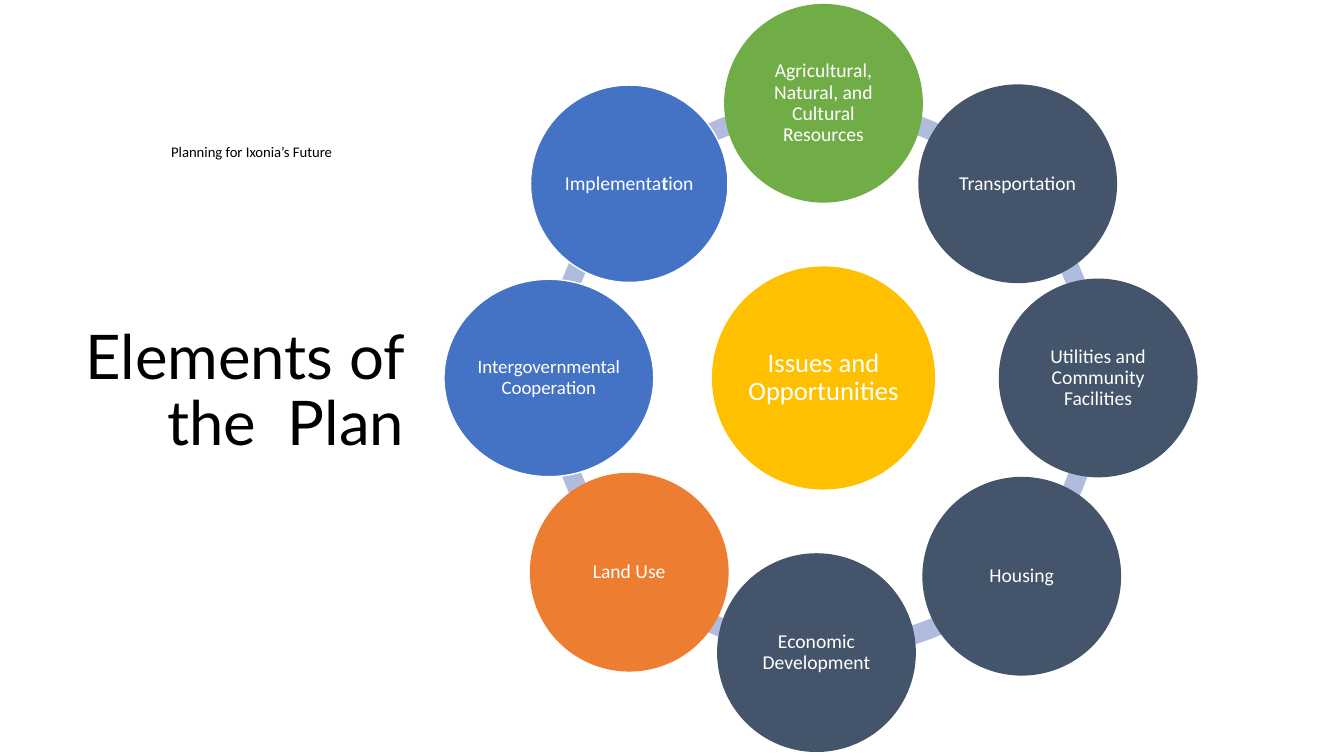
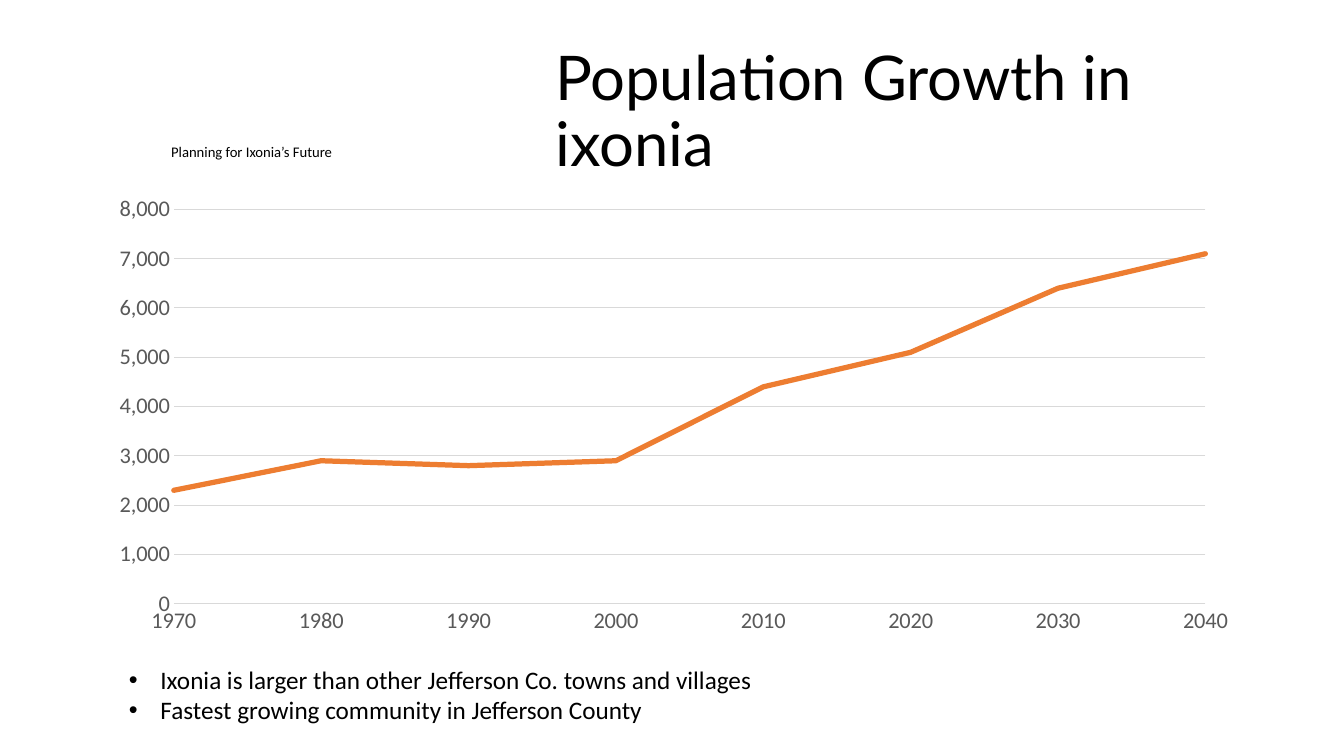
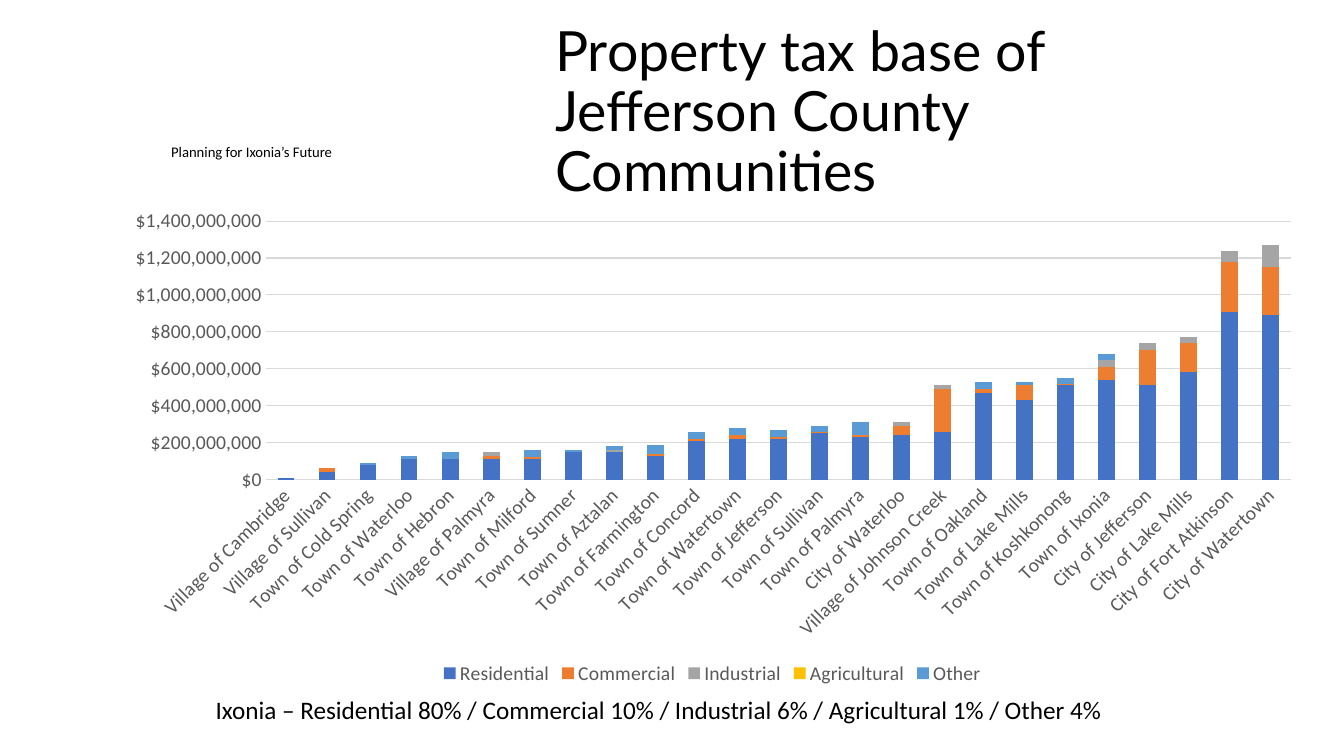
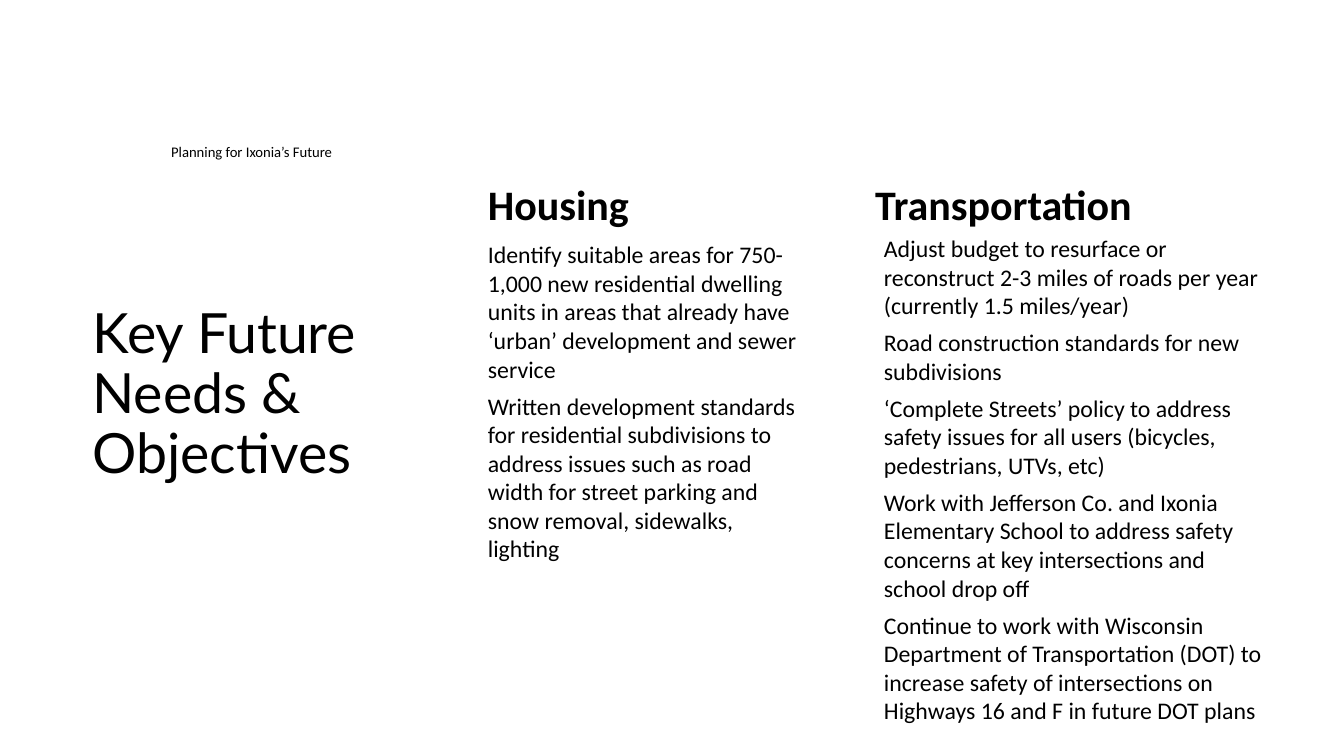
from dataclasses import dataclass
from math import cos, radians, sin
from typing import NamedTuple

from pptx import Presentation
from pptx.chart.chart import Chart
from pptx.chart.data import CategoryChartData
from pptx.dml.color import RGBColor
from pptx.enum.chart import XL_CHART_TYPE, XL_LEGEND_POSITION, XL_TICK_MARK
from pptx.enum.shapes import MSO_SHAPE
from pptx.enum.text import MSO_ANCHOR, PP_ALIGN
from pptx.oxml.ns import qn
from pptx.oxml.xmlchemy import OxmlElement
from pptx.presentation import Presentation as Deck
from pptx.slide import Slide
from pptx.text.text import TextFrame
from pptx.util import Pt

BLACK = RGBColor(0x00, 0x00, 0x00)
WHITE = RGBColor(0xFF, 0xFF, 0xFF)
BLUE = RGBColor(0x44, 0x72, 0xC4)
ORANGE = RGBColor(0xED, 0x7D, 0x31)
GRAY = RGBColor(0xA5, 0xA5, 0xA5)
GOLD = RGBColor(0xFF, 0xC0, 0x00)
SKY = RGBColor(0x5B, 0x9B, 0xD5)
GREEN = RGBColor(0x70, 0xAD, 0x47)
SLATE = RGBColor(0x44, 0x54, 0x6A)
PALE_BLUE = RGBColor(0xB0, 0xBC, 0xDE)
GRID_GRAY = RGBColor(0xD9, 0xD9, 0xD9)
LABEL_GRAY = RGBColor(0x59, 0x59, 0x59)

BODY_FONT = "Calibri"
TITLE_FONT = "Lato"

LINE = XL_CHART_TYPE.LINE
STACKED = XL_CHART_TYPE.COLUMN_STACKED
BOTTOM = XL_LEGEND_POSITION.BOTTOM
NO_TICK = XL_TICK_MARK.NONE
OVAL = MSO_SHAPE.OVAL
BLOCK_ARC = MSO_SHAPE.BLOCK_ARC
LEFT, CENTER, RIGHT = PP_ALIGN.LEFT, PP_ALIGN.CENTER, PP_ALIGN.RIGHT
TOP, MIDDLE = MSO_ANCHOR.TOP, MSO_ANCHOR.MIDDLE

BLANK_LAYOUT = 6


class Box(NamedTuple):
    """A rectangle in points."""
    left: float
    top: float
    width: float
    height: float

    def emu(self) -> list[int]:
        return [Pt(length) for length in self]


class PlotArea(NamedTuple):
    """Inner plot area as fractions of the chart."""
    x: float
    y: float
    w: float
    h: float


class Run(NamedTuple):
    text: str
    bold: bool = False


@dataclass(frozen=True)
class TextStyle:
    size: float
    font: str = BODY_FONT
    color: RGBColor = BLACK
    align: PP_ALIGN = LEFT
    anchor: MSO_ANCHOR = TOP
    line_spacing: float | None = None
    space_after: float = 0
    inset: float | None = None
    bulleted: bool = False


@dataclass(frozen=True)
class Element:
    """A plan element; the ring holds them clockwise from the top."""
    runs: tuple[Run, ...]
    fill: RGBColor
    outline: RGBColor
    width: float = 141
    text_size: float = 14
    dx: float = 0
    dy: float = 0


@dataclass(frozen=True)
class Arc:
    """A ring segment, in degrees clockwise from the right."""
    start: float
    end: float
    dx: float = 0
    dy: float = 0


@dataclass(frozen=True)
class Column:
    heading: str
    heading_box: Box
    needs: tuple[str, ...]
    needs_box: Box


class Series(NamedTuple):
    name: str
    values: list[int]
    color: RGBColor


TITLE_BOX = Box(389.5, 28.8, 504.7, 104.4)
HEADING = TextStyle(30, inset=0)
NEEDS = TextStyle(17, inset=0, space_after=6)
NOTE = TextStyle(18)

RING_X, RING_Y, RING_RADIUS = 588.24, 270, 196.2
ARC_SIZE = 398.88
CIRCLE_HEIGHT = 141
HUB_SIZE = 158.4

ARCS = (
    Arc(225, 270), Arc(180, 225), Arc(135, 180), Arc(91.49, 135.03),
    Arc(46.04, 93.03, dx=5.76), Arc(358.39, 43.88, dy=5.04),
    Arc(315, 0), Arc(270, 315),
)

ELEMENTS = (
    Element((Run("Agricultural, Natural, and Cultural Resources"),), GREEN, GREEN),
    Element((Run("Transportation"),), SLATE, SLATE),
    Element((Run("Utilities and Community Facilities"),), SLATE, SLATE),
    Element((Run("Housing"),), SLATE, SLATE, dx=2.9, dy=2.9),
    Element((Run("Economic Development"),), SLATE, SLATE, dx=-5),
    Element((Run("Land Use"),), ORANGE, ORANGE),
    Element((Run("Intergovernmental Cooperation"),), BLUE, WHITE, 149.8, 13.5),
    Element((Run("Implementa"), Run("t", True), Run("ion")), BLUE, WHITE),
)

POPULATION = {
    "1970": 2300, "1980": 2900, "1990": 2800, "2000": 2900,
    "2010": 4400, "2020": 5100, "2030": 6400, "2040": 7100,
}

MILLION = 1_000_000
PROPERTY_CLASSES = {
    "Residential": BLUE, "Commercial": ORANGE, "Industrial": GRAY,
    "Agricultural": GOLD, "Other": SKY,
}
# Millions of dollars per property class, in the order above
TAX_BASE = {
    "Village of Cambridge": (10, 0, 0, 0, 0),
    "Village of Sullivan": (40, 20, 0, 0, 0),
    "Town of Cold Spring": (80, 0, 0, 0, 10),
    "Town of Waterloo": (110, 0, 0, 0, 20),
    "Town of Hebron": (110, 0, 0, 0, 40),
    "Village of Palmyra": (110, 20, 20, 0, 0),
    "Town of Milford": (110, 10, 0, 0, 40),
    "Town of Sumner": (150, 0, 0, 0, 10),
    "Town of Aztalan": (150, 0, 10, 0, 20),
    "Town of Farmington": (130, 10, 0, 0, 50),
    "Town of Concord": (210, 10, 0, 0, 40),
    "Town of Watertown": (220, 20, 0, 0, 40),
    "Town of Jefferson": (220, 10, 0, 0, 40),
    "Town of Sullivan": (250, 10, 0, 0, 30),
    "Town of Palmyra": (230, 10, 0, 0, 70),
    "City of Waterloo": (240, 50, 20, 0, 0),
    "Village of Johnson Creek": (260, 230, 20, 0, 0),
    "Town of Oakland": (470, 20, 0, 0, 40),
    "Town of Lake Mills": (430, 80, 0, 0, 20),
    "Town of Koshkonong": (510, 10, 0, 0, 30),
    "Town of Ixonia": (540, 70, 40, 0, 30),
    "City of Jefferson": (510, 190, 40, 0, 0),
    "City of Lake Mills": (580, 160, 30, 0, 0),
    "City of Fort Atkinson": (910, 270, 60, 0, 0),
    "City of Watertown": (890, 260, 120, 0, 0),
}

COLUMNS = (
    Column(
        "Housing", Box(348.5, 127.4, 272.2, 36.7),
        ("Identify suitable areas for 750-1,000 new residential dwelling units in "
         "areas that already have ‘urban’ development and sewer service",
         "Written development standards for residential subdivisions to address "
         "issues such as road width for street parking and snow removal, "
         "sidewalks, lighting"),
        Box(348.5, 171.4, 221, 284.4),
    ),
    Column(
        "Transportation", Box(625, 127.4, 272.2, 36.7),
        ("Adjust budget to resurface or reconstruct 2-3 miles of roads per year "
         "(currently 1.5 miles/year)",
         "Road construction standards for new subdivisions",
         "‘Complete Streets’ policy to address safety issues for all users "
         "(bicycles, pedestrians, UTVs, etc)",
         "Work with Jefferson Co. and Ixonia Elementary School to address safety "
         "concerns at key intersections and school drop off",
         "Continue to work with Wisconsin Department of Transportation (DOT) to "
         "increase safety of intersections on Highways 16 and F in future DOT plans"),
        Box(631.4, 167, 272.2, 284.4),
    ),
)


def write_text(frame: TextFrame, paragraphs: list[tuple[Run, ...]], style: TextStyle) -> None:
    frame.word_wrap = True
    frame.vertical_anchor = style.anchor
    if style.inset is not None:
        frame.margin_left = frame.margin_right = Pt(style.inset)
        frame.margin_top = frame.margin_bottom = Pt(style.inset)
    for index, runs in enumerate(paragraphs):
        paragraph = frame.add_paragraph() if index else frame.paragraphs[0]
        if style.bulleted:
            properties = paragraph._p.get_or_add_pPr()
            properties.set("marL", str(Pt(22.5)))
            properties.set("indent", str(Pt(-22.5)))
            bullet_font = OxmlElement("a:buFont")
            bullet_font.set("typeface", "Arial")
            bullet = OxmlElement("a:buChar")
            bullet.set("char", "•")
            properties.extend([bullet_font, bullet])
        paragraph.alignment = style.align
        paragraph.space_after = Pt(style.space_after)
        if style.line_spacing:
            paragraph.line_spacing = style.line_spacing
        for text, bold in runs:
            run = paragraph.add_run()
            run.text = text
            run.font.name = style.font
            run.font.size = Pt(style.size)
            run.font.bold = bold
            run.font.color.rgb = style.color


def add_text(slide: Slide, box: Box, style: TextStyle, *lines: str, bold: bool = False) -> None:
    frame = slide.shapes.add_textbox(*box.emu()).text_frame
    write_text(frame, [(Run(line, bold),) for line in lines], style)


def new_slide(deck: Deck, title: str, box: Box = TITLE_BOX, size: float = 44,
              align: PP_ALIGN = LEFT) -> Slide:
    """Add a slide with the shared tagline and its title."""
    slide = deck.slides.add_slide(deck.slide_layouts[BLANK_LAYOUT])
    add_text(slide, Box(115.2, 98.6, 166.3, 20.2), TextStyle(10.5), "Planning for Ixonia’s Future")
    style = TextStyle(size, TITLE_FONT, align=align, anchor=MIDDLE, line_spacing=0.9)
    add_text(slide, box, style, title)
    return slide


def centered_box(x: float, y: float, width: float, height: float) -> Box:
    return Box(x - width / 2, y - height / 2, width, height)


def add_arc(slide: Slide, arc: Arc) -> None:
    box = centered_box(RING_X + arc.dx, RING_Y + arc.dy, ARC_SIZE, ARC_SIZE)
    shape = slide.shapes.add_shape(BLOCK_ARC, *box.emu())
    shape.shadow.inherit = False
    shape.fill.solid()
    shape.fill.fore_color.rgb = PALE_BLUE
    shape.line.fill.background()
    # Angles are stored in 60000ths of a degree, adjustments in 100000ths
    shape.adjustments[0] = arc.start * 0.6
    shape.adjustments[1] = arc.end * 0.6
    shape.adjustments[2] = 0.034


def add_circle(slide: Slide, box: Box, element: Element) -> None:
    shape = slide.shapes.add_shape(OVAL, *box.emu())
    shape.shadow.inherit = False
    shape.fill.solid()
    shape.fill.fore_color.rgb = element.fill
    shape.line.color.rgb = element.outline
    shape.line.width = Pt(1)
    style = TextStyle(element.text_size, color=WHITE, align=CENTER, anchor=MIDDLE,
                      line_spacing=0.9, inset=1.5)
    write_text(shape.text_frame, [element.runs], style)


def set_plot_area(chart: Chart, area: PlotArea) -> None:
    plot_area = chart._chartSpace.find(".//" + qn("c:plotArea"))
    for old in plot_area.findall(qn("c:layout")):
        plot_area.remove(old)
    layout = OxmlElement("c:layout")
    manual = OxmlElement("c:manualLayout")
    settings = {"layoutTarget": "inner", "xMode": "edge", "yMode": "edge", **area._asdict()}
    for name, value in settings.items():
        setting = OxmlElement(f"c:{name}")
        setting.set("val", str(value))
        manual.append(setting)
    layout.append(manual)
    plot_area.insert(0, layout)


def add_styled_chart(slide: Slide, kind: XL_CHART_TYPE, box: Box, categories: list[str],
                     series: list[Series], label_size: float, number_format: str,
                     maximum: int, step: int, area: PlotArea) -> Chart:
    data = CategoryChartData()
    data.categories = categories
    for name, values, _ in series:
        data.add_series(name, values)
    chart = slide.shapes.add_chart(kind, *box.emu(), data).chart
    chart.has_title = False
    chart.has_legend = False
    chart.font.name = BODY_FONT
    chart.font.size = Pt(10)
    chart.font.color.rgb = BLACK
    chart.plots[0].vary_by_categories = False
    set_plot_area(chart, area)

    value_axis, category_axis = chart.value_axis, chart.category_axis
    for axis in (value_axis, category_axis):
        axis.major_tick_mark = axis.minor_tick_mark = NO_TICK
        font = axis.tick_labels.font
        font.name = BODY_FONT
        font.size = Pt(label_size)
        font.color.rgb = LABEL_GRAY
    value_axis.minimum_scale = 0
    value_axis.maximum_scale = maximum
    value_axis.major_unit = step
    value_axis.tick_labels.number_format = number_format
    value_axis.tick_labels.number_format_is_linked = False
    value_axis.format.line.fill.background()
    value_axis.has_major_gridlines = True
    for line in (value_axis.major_gridlines.format.line, category_axis.format.line):
        line.color.rgb = GRID_GRAY
        line.width = Pt(0.75)
    return chart


def start_line_at_axis(chart: Chart) -> None:
    axis = chart.value_axis._element
    for old in axis.findall(qn("c:crossBetween")):
        axis.remove(old)
    crossing = OxmlElement("c:crossBetween")
    crossing.set("val", "midCat")
    axis.find(qn("c:crosses")).addnext(crossing)


def build_elements(deck: Deck) -> None:
    slide = new_slide(deck, "Elements of the  Plan", Box(48.2, 196.6, 247.7, 167.8), align=RIGHT)
    for arc in ARCS:
        add_arc(slide, arc)
    hub = Element((Run("Issues and Opportunities"),), GOLD, GOLD, text_size=19)
    add_circle(slide, centered_box(RING_X, RING_Y, HUB_SIZE, HUB_SIZE), hub)
    for index, element in enumerate(ELEMENTS):
        angle = radians(index * 360 / len(ELEMENTS) - 90)
        x = RING_X + RING_RADIUS * cos(angle) + element.dx
        y = RING_Y + RING_RADIUS * sin(angle) + element.dy
        add_circle(slide, centered_box(x, y, element.width, CIRCLE_HEIGHT), element)


def build_population(deck: Deck) -> None:
    slide = new_slide(deck, "Population Growth in ixonia")
    growth = Series("Series 1", list(POPULATION.values()), ORANGE)
    chart = add_styled_chart(slide, LINE, Box(66.2, 133.2, 828, 327.6), list(POPULATION),
                             [growth], 16, "#,##0", 8000, 1000,
                             PlotArea(0.07, 0.05, 0.89, 0.86))
    start_line_at_axis(chart)
    curve = chart.plots[0].series[0]
    curve.smooth = False
    curve.format.line.color.rgb = growth.color
    curve.format.line.width = Pt(3.75)
    curve._element.find(".//" + qn("a:ln")).set("cap", "rnd")
    add_text(slide, Box(85, 470.9, 821.5, 51.1), TextStyle(18, bulleted=True),
             "Ixonia is larger than other Jefferson Co. towns and villages",
             "Fastest growing community in Jefferson County")


def build_tax_base(deck: Deck) -> None:
    slide = new_slide(deck, "Property tax base of Jefferson County Communities", size=39.6)
    series = [
        Series(name, [amount * MILLION for amount in amounts], color)
        for (name, color), amounts in zip(PROPERTY_CLASSES.items(), zip(*TAX_BASE.values()))
    ]
    chart = add_styled_chart(slide, STACKED, Box(77.8, 144, 861.8, 348.5), list(TAX_BASE),
                             series, 14, '"$"#,##0', 1400 * MILLION, 200 * MILLION,
                             PlotArea(0.13, 0.04, 0.85, 0.53))
    plot = chart.plots[0]
    plot.gap_width = 150
    plot.overlap = 100
    for bars, entry in zip(plot.series, series):
        bars.format.fill.solid()
        bars.format.fill.fore_color.rgb = entry.color
    chart.category_axis._element.find(f"{qn('c:txPr')}/{qn('a:bodyPr')}").set("rot", "-2700000")
    chart.has_legend = True
    chart.legend.position = BOTTOM
    chart.legend.include_in_layout = False
    chart.legend.font.name = BODY_FONT
    chart.legend.font.size = Pt(14)
    chart.legend.font.color.rgb = LABEL_GRAY
    add_text(slide, Box(146.9, 492.5, 681.1, 28.8), NOTE,
             "Ixonia – Residential 80% / Commercial 10% / Industrial 6% / "
             "Agricultural 1% / Other 4%")


def build_needs(deck: Deck) -> None:
    slide = new_slide(deck, "Key Future Needs & Objectives", Box(59, 230.4, 276.5, 104.4), 39.6)
    for column in COLUMNS:
        add_text(slide, column.heading_box, HEADING, column.heading, bold=True)
        add_text(slide, column.needs_box, NEEDS, *column.needs)


def main() -> None:
    deck = Presentation()
    deck.slide_width = Pt(960)
    deck.slide_height = Pt(540)
    for build in (build_elements, build_population, build_tax_base, build_needs):
        build(deck)
    deck.save("out.pptx")


if __name__ == "__main__":
    main()
